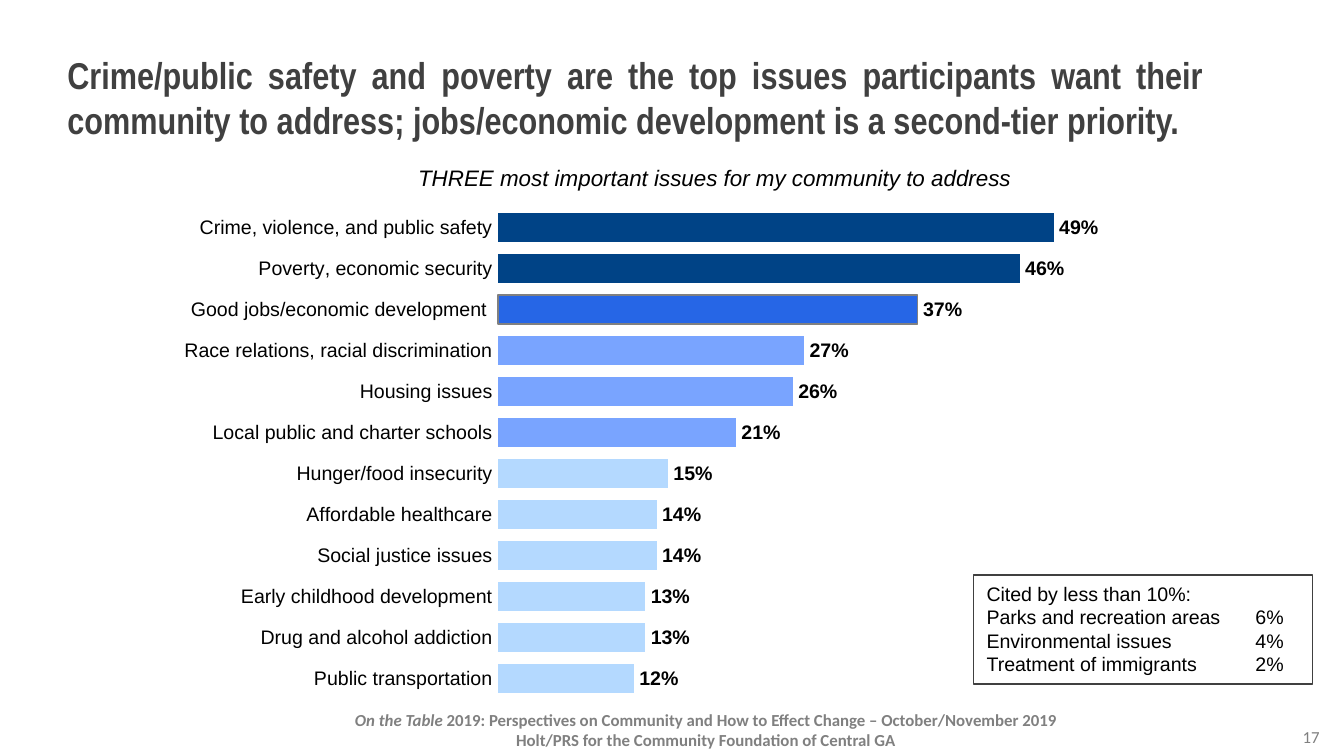
import pptx
import pptx.chart.data
import pptx.dml.color
import pptx.enum.chart
import pptx.enum.shapes
import pptx.enum.text
import pptx.oxml
import pptx.oxml.ns
import pptx.util

Pt = pptx.util.Pt
ALIGN = pptx.enum.text.PP_ALIGN
ANCHOR = pptx.enum.text.MSO_ANCHOR
COLORS = {
    "text": "000000",
    "title": "404040",
    "muted": "808080",
    "top": "004386",
    "second": "2666E6",
    "middle": "79A4FF",
    "low": "B4D9FF",
}
ISSUES = [
    ("Crime, violence, and public safety", 0.49, "top"),
    ("Poverty, economic security", 0.46, "top"),
    ("Good jobs/economic development ", 0.37, "second"),
    ("Race relations, racial discrimination", 0.27, "middle"),
    ("Housing issues", 0.26, "middle"),
    ("Local public and charter schools", 0.21, "middle"),
    ("Hunger/food insecurity", 0.15, "low"),
    ("Affordable healthcare", 0.14, "low"),
    ("Social justice issues", 0.14, "low"),
    ("Early childhood development", 0.13, "low"),
    ("Drug and alcohol addiction", 0.13, "low"),
    ("Public transportation", 0.12, "low"),
]
MINOR_ISSUES = [
    ("Parks and recreation areas", "6%"),
    ("Environmental issues", "4%"),
    ("Treatment of immigrants", "2%"),
]


def rgb(name):
    """Return the palette colour with this name."""
    return pptx.dml.color.RGBColor.from_string(COLORS[name])


class IssueSlide:
    """Hold the style and the current slide, and add elements to it."""

    font = "Arial"
    small = 10.5

    def __init__(self, deck):
        """Add a blank slide to the deck."""
        self.slide = deck.slides.add_slide(deck.slide_layouts[6])

    def style(self, font, size, color="text", name=None, bold=False, italic=False):
        """Set the typeface, size, colour and weight of a font."""
        font.name = name or self.font
        font.size = Pt(size)
        font.bold = bold
        font.italic = italic
        font.color.rgb = rgb(color)

    def fill_text(self, frame, lines, align, tab=None, **look):
        """Fill a text frame with equally styled lines."""
        frame.word_wrap = True
        frame.text = "\n".join(lines)
        for paragraph in frame.paragraphs:
            paragraph.alignment = align
            if tab:
                stops = pptx.oxml.parse_xml(
                    f'<a:tabLst {pptx.oxml.ns.nsdecls("a")}>'
                    f'<a:tab pos="{Pt(tab)}" algn="l"/></a:tabLst>'
                )
                paragraph._p.get_or_add_pPr().append(stops)
            for run in paragraph.runs:
                self.style(run.font, **look)

    def text(self, box, lines, align, anchor=ANCHOR.TOP, **look):
        """Add a text box and return its text frame."""
        frame = self.slide.shapes.add_textbox(*map(Pt, box)).text_frame
        frame.vertical_anchor = anchor
        self.fill_text(frame, lines, align, **look)
        return frame

    def note(self, box, lines, tab):
        """Add an outlined box of tabbed lines."""
        outline = self.slide.shapes.add_shape(
            pptx.enum.shapes.MSO_SHAPE.RECTANGLE, *map(Pt, box)
        )
        outline.shadow.inherit = False
        outline.fill.background()
        outline.line.color.rgb = rgb("title")
        outline.line.width = Pt(0.75)
        outline.text_frame.vertical_anchor = ANCHOR.TOP
        self.fill_text(outline.text_frame, lines, ALIGN.LEFT, tab=tab, size=self.small)

    def bars(self, box, issues, plot_area):
        """Add a horizontal bar chart with the first issue on top."""
        rows = issues[::-1]
        data = pptx.chart.data.CategoryChartData(number_format="0%")
        data.categories = [label for label, _, _ in rows]
        data.add_series("Series 1", [share for _, share, _ in rows])
        chart = self.slide.shapes.add_chart(
            pptx.enum.chart.XL_CHART_TYPE.BAR_CLUSTERED, *map(Pt, box), data
        ).chart
        self.style(chart.font, 18)
        chart.has_legend = False
        chart.has_title = False

        issue_axis = chart.category_axis
        issue_axis.major_tick_mark = pptx.enum.chart.XL_TICK_MARK.NONE
        issue_axis.format.line.fill.background()
        self.style(issue_axis.tick_labels.font, self.small)
        share_axis = chart.value_axis
        share_axis.visible = False
        share_axis.has_major_gridlines = False
        share_axis.minimum_scale = 0
        share_axis.maximum_scale = 0.6

        plot = chart.plots[0]
        plot.gap_width = 41
        plot.vary_by_categories = False
        plot.has_data_labels = True
        labels = plot.data_labels
        labels.show_value = True
        labels.number_format = "0%"
        labels.number_format_is_linked = False
        labels.position = pptx.enum.chart.XL_LABEL_POSITION.OUTSIDE_END
        self.style(labels.font, self.small, bold=True)
        for index, (_, _, tier) in enumerate(rows):
            bar = plot.series[0].points[index].format
            bar.fill.solid()
            bar.fill.fore_color.rgb = rgb(tier)
            if tier == "second":
                bar.line.color.rgb = rgb("muted")
                bar.line.width = Pt(0.75)
        self.place_plot(chart, plot_area)

    def place_plot(self, chart, plot_area):
        """Fix the inner plot area as fractions of the chart."""
        area = chart.element.xpath("c:chart/c:plotArea")[0]
        for old in area.xpath("c:layout"):
            area.remove(old)
        places = "".join(
            f'<c:{key} val="{value}"/>' for key, value in zip("xywh", plot_area)
        )
        layout = pptx.oxml.parse_xml(
            f'<c:layout {pptx.oxml.ns.nsdecls("c")}><c:manualLayout>'
            '<c:layoutTarget val="inner"/><c:xMode val="edge"/><c:yMode val="edge"/>'
            f"{places}</c:manualLayout></c:layout>"
        )
        area.insert(0, layout)


def main():
    """Build the community issues slide."""
    deck = pptx.Presentation()
    deck.slide_width, deck.slide_height = Pt(720), Pt(405)
    page = IssueSlide(deck)
    muted = {"size": 9, "color": "muted", "name": "Calibri"}
    footer = page.text(
        (178, 376.5, 400, 29),
        ["On the Table", "Holt/PRS for the Community Foundation of Central GA"],
        ALIGN.CENTER, bold=True, **muted,
    )
    program = footer.paragraphs[0].runs[0]
    program.font.italic = True
    report = footer.paragraphs[0].add_run()
    report.text = (
        " 2019: Perspectives on Community and How to Effect Change"
        " – October/November 2019"
    )
    page.style(report.font, bold=True, **muted)
    page.text(
        (29, 18, 623, 68),
        [
            "Crime/public safety and poverty are the top issues participants want their"
            " community to address; jobs/economic development is a second-tier priority."
        ],
        ALIGN.JUSTIFY, ANCHOR.MIDDLE,
        size=20, color="title", name="Arial Narrow", bold=True,
    )
    page.bars((73, 99.5, 570, 286.5), ISSUES, (0.34, 0.04, 0.64, 0.92))
    page.text((668, 386, 46, 18), ["17"], ALIGN.RIGHT, **muted)
    page.text(
        (79, 84.5, 608, 22),
        ["THREE most important issues for my community to address"],
        ALIGN.CENTER, size=12, italic=True,
    )
    minor = [f"{issue}\t{share}" for issue, share in MINOR_ISSUES]
    page.note((521.5, 308, 181.5, 58.5), ["Cited by less than 10%:", *minor], tab=144)
    deck.save("out.pptx")


if __name__ == "__main__":
    main()
